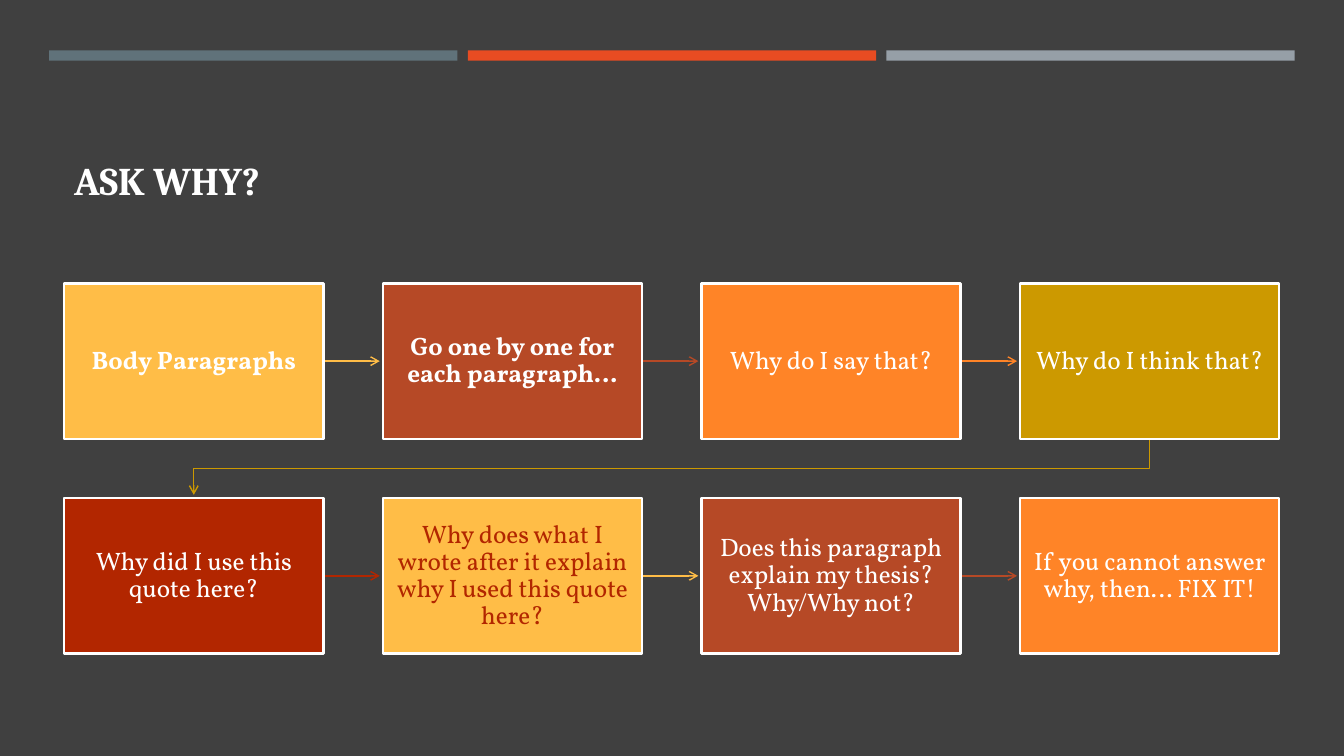
from lxml import etree
from pptx import Presentation
from pptx.dml.color import RGBColor
from pptx.enum.shapes import MSO_CONNECTOR, MSO_SHAPE
from pptx.enum.text import MSO_ANCHOR, PP_ALIGN
from pptx.oxml.ns import qn
from pptx.util import Cm, Pt

RECTANGLE = MSO_SHAPE.RECTANGLE
STRAIGHT = MSO_CONNECTOR.STRAIGHT
MIDDLE, BOTTOM = MSO_ANCHOR.MIDDLE, MSO_ANCHOR.BOTTOM
LEFT, CENTER = PP_ALIGN.LEFT, PP_ALIGN.CENTER

BLACK = RGBColor(0x00, 0x00, 0x00)
CHARCOAL = RGBColor(0x40, 0x40, 0x40)
WHITE = RGBColor(0xFF, 0xFF, 0xFF)
SLATE = RGBColor(0x60, 0x72, 0x7A)
VERMILION = RGBColor(0xE8, 0x4C, 0x22)
SILVER = RGBColor(0x96, 0x9F, 0xA7)
AMBER = RGBColor(0xFF, 0xBD, 0x47)
RUST = RGBColor(0xB6, 0x49, 0x26)
ORANGE = RGBColor(0xFF, 0x84, 0x27)
GOLD = RGBColor(0xCC, 0x99, 0x00)
RED = RGBColor(0xB2, 0x26, 0x00)

SLIDE_WIDTH, SLIDE_HEIGHT = 33.87, 19.05

# Step grid, in centimetres
COLUMNS = 4
STEP_LEFT, STEP_TOP = 1.62, 7.14
STEP_WIDTH, STEP_HEIGHT = 6.53, 3.92
PITCH_X, PITCH_Y = 8.03, 5.41
ARROW_GAP = 0.08

# Wording, fill, text colour, bold
STEPS = [
    ("Body Paragraphs", AMBER, WHITE, True),
    ("Go one by one for each paragraph…", RUST, WHITE, True),
    ("Why do I say that?", ORANGE, WHITE, False),
    ("Why do I think that?", GOLD, WHITE, False),
    ("Why did I use this quote here?", RED, WHITE, False),
    ("Why does what I wrote after it explain why I used this quote here?",
     AMBER, RED, False),
    ("Does this paragraph explain my thesis? Why/Why not?", RUST, WHITE, False),
    ("If you cannot answer why, then… FIX IT!", ORANGE, WHITE, False),
]


def write_text(box, text, *, font, size, color=WHITE, bold=False, align=LEFT,
               anchor=MIDDLE, inset=None, line_spacing=None, space_after=0):
    """Fill a shape's text frame with one formatted paragraph."""
    frame = box.text_frame
    frame.word_wrap = True
    frame.vertical_anchor = anchor
    if inset is not None:
        frame.margin_left = frame.margin_right = Cm(inset)
        frame.margin_top = frame.margin_bottom = Cm(inset)
    para = frame.paragraphs[0]
    para.alignment = align
    para.space_after = Pt(space_after)
    if line_spacing:
        para.line_spacing = line_spacing
    span = para.add_run()
    span.text = text
    span.font.name = font
    span.font.size = Pt(size)
    span.font.bold = bold
    span.font.color.rgb = color


class FlowSlide:
    title_style = {"font": "Cambria", "size": 28, "bold": True, "anchor": BOTTOM}
    step_style = {"font": "Vollkorn", "size": 18, "align": CENTER, "inset": 0.33,
                  "line_spacing": 0.9, "space_after": 6.3}
    border_width = Pt(1.75)
    arrow_width = Pt(1)

    def __init__(self, page):
        self.page = page
        self.shapes = page.shapes

    def background(self, color):
        fill = self.page.background.fill
        fill.solid()
        fill.fore_color.rgb = color

    def block(self, left, top, width, height, color, border=None):
        box = self.shapes.add_shape(RECTANGLE, Cm(left), Cm(top),
                                    Cm(width), Cm(height))
        box.shadow.inherit = False
        box.fill.solid()
        box.fill.fore_color.rgb = color
        if border is None:
            box.line.fill.background()
        else:
            box.line.color.rgb = border
            box.line.width = self.border_width
        return box

    def title(self, text, left, top, width, height):
        box = self.shapes.add_textbox(Cm(left), Cm(top), Cm(width), Cm(height))
        write_text(box, text, **self.title_style)

    def step(self, text, left, top, fill, color, bold):
        box = self.block(left, top, STEP_WIDTH, STEP_HEIGHT, fill, WHITE)
        write_text(box, text, color=color, bold=bold, **self.step_style)

    def arrow(self, points, color):
        """Draw a straight arrow through two points, or a bent one through more."""
        points = [(Cm(x), Cm(y)) for x, y in points]
        if len(points) == 2:
            line = self.shapes.add_connector(STRAIGHT, *points[0], *points[1])
            etree.SubElement(line._element.spPr, qn("a:effectLst"))
        else:
            builder = self.shapes.build_freeform(*points[0])
            builder.add_line_segments(points[1:], close=False)
            line = builder.convert_to_shape()
            line.fill.background()
            line.shadow.inherit = False
        line.line.color.rgb = color
        line.line.width = self.arrow_width
        head = etree.SubElement(line.line._get_or_add_ln(), qn("a:tailEnd"))
        head.set("type", "arrow")


def step_corner(index):
    row, column = divmod(index, COLUMNS)
    return STEP_LEFT + column * PITCH_X, STEP_TOP + row * PITCH_Y


def arrow_points(index):
    """Route from one step to the next, wrapping at the end of a row."""
    left, top = step_corner(index)
    next_left, next_top = step_corner(index + 1)
    if next_top == top:
        middle = top + STEP_HEIGHT / 2
        return [(left + STEP_WIDTH, middle), (next_left - ARROW_GAP, middle)]
    start_x, end_x = left + STEP_WIDTH / 2, next_left + STEP_WIDTH / 2
    bottom = top + STEP_HEIGHT
    turn = (bottom + next_top) / 2
    return [(start_x, bottom), (start_x, turn), (end_x, turn),
            (end_x, next_top - ARROW_GAP)]


def main():
    deck = Presentation()
    deck.slide_width, deck.slide_height = Cm(SLIDE_WIDTH), Cm(SLIDE_HEIGHT)
    slide = FlowSlide(deck.slides.add_slide(deck.slide_layouts[6]))

    # Backdrop and title
    slide.background(BLACK)
    slide.block(0, 0, SLIDE_WIDTH, SLIDE_HEIGHT, CHARCOAL)
    slide.title("ASK WHY?", STEP_LEFT, 1.96, 30.63, 3.3)

    # Accent bars
    for index, color in enumerate((SLATE, VERMILION, SILVER)):
        slide.block(1.24 + index * 10.55, 1.27, 10.29, 0.26, color)

    # Steps, each with an arrow to the next
    for index, (text, fill, color, bold) in enumerate(STEPS):
        if index < len(STEPS) - 1:
            slide.arrow(arrow_points(index), fill)
        slide.step(text, *step_corner(index), fill, color, bold)

    deck.save("out.pptx")


if __name__ == "__main__":
    main()
